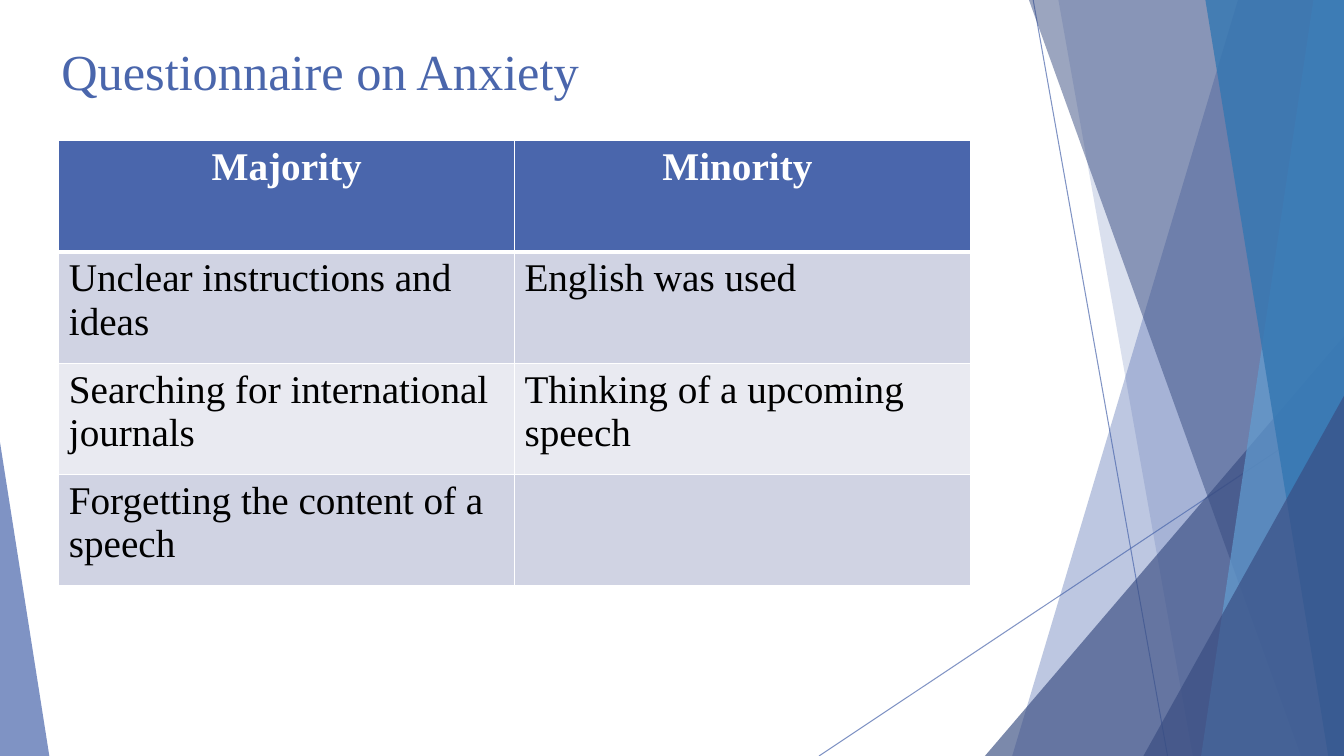
from dataclasses import dataclass

from lxml.etree import SubElement
from pptx import Presentation
from pptx.dml.color import RGBColor
from pptx.enum.shapes import MSO_CONNECTOR as Connector, MSO_SHAPE as Preset
from pptx.enum.text import MSO_ANCHOR as Anchor, MSO_AUTO_SIZE as AutoSize, PP_ALIGN as Align
from pptx.oxml.ns import qn
from pptx.util import Emu, Pt

EMU_PER_PX = 9525
WIDTH, HEIGHT = 1280, 720


def px(length):
    """Turn whole pixels into EMU."""
    return Emu(length * EMU_PER_PX)


@dataclass(frozen=True)
class Theme:
    """Colours and type sizes of the slide."""
    font: str = "Times New Roman"
    title_size: int = 36
    cell_size: int = 28
    blue: str = "4A66AC"
    navy: str = "384C81"
    sky: str = "629DD1"
    ocean: str = "3477B2"
    white: str = "FFFFFF"
    black: str = "000000"
    bands: tuple = ("D0D3E3", "E9EAF1")
    hairline: float = 0.75
    rule: int = 1
    header_rule: int = 3


class SlideBuilder:
    """Draw themed elements on the current slide."""

    def __init__(self, theme, slide):
        self.theme = theme
        self.slide = slide
        self.shapes = slide.shapes

    def paint(self, fill, color, opacity=100):
        """Give a fill a solid colour and an opacity in percent."""
        fill.solid()
        fill.fore_color.rgb = RGBColor.from_string(color)
        if opacity < 100:
            tint = fill._xPr.find(f"{qn('a:solidFill')}/{qn('a:srgbClr')}")
            SubElement(tint, qn("a:alpha"), val=str(opacity * 1000))

    def facet(self, shape, color, opacity):
        """Style a translucent shape without outline or shadow."""
        self.paint(shape.fill, color, opacity)
        shape.line.fill.background()
        shape.shadow.inherit = False

    def shard(self, top_left, bottom_left, color, opacity):
        """Draw a full-height shard that ends at the right slide edge."""
        outline = self.shapes.build_freeform(px(top_left), 0, scale=1.0)
        corners = [(WIDTH, 0), (WIDTH, HEIGHT), (bottom_left, HEIGHT)]
        outline.add_line_segments([(px(x), px(y)) for x, y in corners], close=True)
        self.facet(outline.convert_to_shape(), color, opacity)

    def peak(self, left, top, width, apex, color, opacity):
        """Draw a triangle that stands on the bottom slide edge."""
        triangle = self.shapes.add_shape(
            Preset.ISOSCELES_TRIANGLE, px(left), px(top), px(width), px(HEIGHT - top))
        triangle.adjustments[0] = apex
        self.facet(triangle, color, opacity)

    def ray(self, start, end, color, opacity):
        """Draw a thin straight line."""
        line = self.shapes.add_connector(
            Connector.STRAIGHT, *(px(value) for value in start + end))
        line.line.width = Pt(self.theme.hairline)
        self.paint(line.line.fill, color, opacity)
        SubElement(line.element.spPr, qn("a:effectLst"))

    def fill_text(self, frame, text, size, color, align, bold=False):
        """Set text and format its runs."""
        frame.text = text
        for paragraph in frame.paragraphs:
            paragraph.alignment = align
            for run in paragraph.runs:
                run.font.name = self.theme.font
                run.font.size = Pt(size)
                run.font.bold = bold
                run.font.color.rgb = RGBColor.from_string(color)

    def title(self, text, left, top, width, height):
        """Place the title placeholder in front of the backdrop."""
        heading = self.shapes.title
        heading.element.getparent().append(heading.element)
        heading.left, heading.top = px(left), px(top)
        heading.width, heading.height = px(width), px(height)
        frame = heading.text_frame
        frame.auto_size = AutoSize.NONE
        frame.word_wrap = True
        frame.vertical_anchor = Anchor.TOP
        frame.margin_top = px(10)
        self.fill_text(frame, text, self.theme.title_size, self.theme.blue, Align.CENTER)

    def borders(self, cell, top, bottom):
        """Rule a cell in white, with the given top and bottom widths."""
        properties = cell._tc.get_or_add_tcPr()
        sides = {"lnL": self.theme.rule, "lnR": self.theme.rule, "lnT": top, "lnB": bottom}
        for position, (side, width) in enumerate(sides.items()):
            edge = SubElement(properties, qn(f"a:{side}"), w=str(Pt(width)))
            solid = SubElement(edge, qn("a:solidFill"))
            SubElement(solid, qn("a:srgbClr"), val=self.theme.white)
            properties.insert(position, edge)

    def table(self, rows, left, top, column_width, row_height):
        """Draw a table with a header row and banded body rows."""
        theme = self.theme
        columns = len(rows[0])
        grid = self.shapes.add_table(
            len(rows), columns, px(left), px(top),
            px(column_width * columns), px(row_height * len(rows))).table
        for row_index, answers in enumerate(rows):
            header = row_index == 0
            grid.rows[row_index].height = px(row_height)
            for column_index, answer in enumerate(answers):
                grid.columns[column_index].width = px(column_width)
                cell = grid.cell(row_index, column_index)
                self.paint(cell.fill, theme.blue if header else theme.bands[(row_index - 1) % 2])
                self.borders(cell, theme.header_rule if row_index == 1 else theme.rule,
                             theme.header_rule if header else theme.rule)
                self.fill_text(cell.text_frame, answer, theme.cell_size,
                               theme.white if header else theme.black,
                               Align.CENTER if header else Align.LEFT, header)


def main():
    """Build the questionnaire slide."""
    theme = Theme()
    deck = Presentation()
    deck.slide_width, deck.slide_height = px(WIDTH), px(HEIGHT)
    page = SlideBuilder(theme, deck.slides.add_slide(deck.slide_layouts[5]))

    page.ray((984, 0), (1112, HEIGHT), theme.blue, 70)
    page.ray((WIDTH, 387), (780, HEIGHT), theme.blue, 70)
    page.shard(1179, 964, theme.blue, 36)
    page.shard(1008, 1136, theme.blue, 20)
    page.peak(938, 320, 342, 1, theme.navy, 66)
    page.shard(980, 1239, theme.navy, 50)
    page.shard(1251, 1144, theme.sky, 70)
    page.shard(1148, 1265, theme.ocean, 80)
    page.peak(1089, 377, 191, 1, theme.navy, 66)
    page.peak(0, 421, 47, 0, theme.blue, 70)

    page.title("Questionnaire on Anxiety", -146, 28, 902, 138)
    page.table([
        ("Majority", "Minority "),
        ("Unclear instructions and ideas", "English was used"),
        ("Searching for international journals", "Thinking of a upcoming speech"),
        ("Forgetting the content of a speech", ""),
    ], 56, 134, 434, 106)
    deck.save("out.pptx")


if __name__ == "__main__":
    main()
